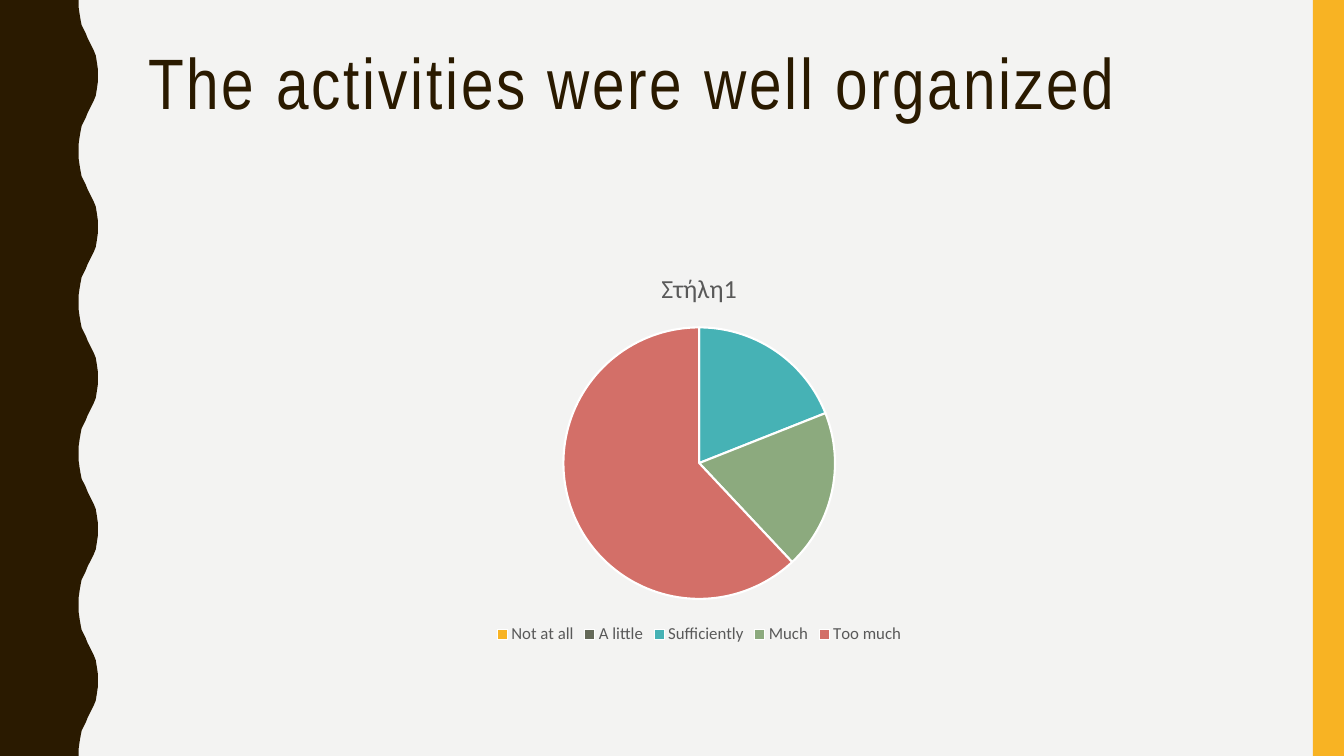
from dataclasses import dataclass

from pptx import Presentation
from pptx import util as u
from pptx.chart.data import CategoryChartData
from pptx.dml.color import RGBColor
from pptx.enum import chart as ch, shapes, text


@dataclass(frozen=True)
class Theme:
    background: str = "F3F3F2"
    dark: str = "2A1A00"
    accent: str = "F8B323"
    muted: str = "595959"
    outline: str = "FFFFFF"
    title_font: str = "Arial Narrow"
    body_font: str = "Calibri"
    title_size: float = 51
    chart_title_size: float = 18.6
    legend_size: float = 12


@dataclass(frozen=True)
class Answer:
    label: str
    percent: int
    color: str


THEME = Theme()
WIDTH, HEIGHT = 13.33, 7.5
LEFT, CONTENT_WIDTH = 1.37, 11.13
SERIES_NAME = "Στήλη1"
ANSWERS = [
    Answer("Not at all", 0, THEME.accent),
    Answer("A little", 0, "656A59"),
    Answer("Sufficiently", 19, "46B2B5"),
    Answer("Much", 19, "8CAA7E"),
    Answer("Too much", 62, "D36F68"),
]
WAVE_COUNT = 5
WAVE_HEIGHT = HEIGHT / WAVE_COUNT
HALF_WAVE = [
    (0.78, 0), (0.78, 0.07), (0.79, 0.14), (0.8, 0.2), (0.81, 0.25),
    (0.83, 0.29), (0.85, 0.33), (0.87, 0.38), (0.89, 0.42), (0.91, 0.46),
    (0.93, 0.5), (0.95, 0.55), (0.96, 0.61), (0.97, 0.68), (0.97, 0.75),
]


def paint(fill, color: str) -> None:
    fill.solid()
    fill.fore_color.rgb = RGBColor.from_string(color)


def style_font(font, name: str, size: float, color: str) -> None:
    font.name = name
    font.size = u.Pt(size)
    font.bold = False
    font.color.rgb = RGBColor.from_string(color)


def finish_shape(sp, color: str) -> None:
    paint(sp.fill, color)
    sp.line.fill.background()
    sp.shadow.inherit = False


def draw_wavy_edge(s) -> None:
    mirrored = [(x, WAVE_HEIGHT - y) for x, y in reversed(HALF_WAVE[:-1])]
    wave = HALF_WAVE + mirrored
    edge = [(x, y + i * WAVE_HEIGHT) for i in range(WAVE_COUNT) for x, y in wave]
    outline = edge + [(0, HEIGHT)]
    builder = s.shapes.build_freeform(0, 0)
    builder.add_line_segments([(u.Inches(x), u.Inches(y)) for x, y in outline])
    finish_shape(builder.convert_to_shape(), THEME.dark)


def draw_right_band(s) -> None:
    band = 0.31
    sp = s.shapes.add_shape(
        shapes.MSO_SHAPE.RECTANGLE,
        u.Inches(WIDTH - band), 0, u.Inches(band), u.Inches(HEIGHT),
    )
    finish_shape(sp, THEME.accent)


def write_title(s, wording: str) -> None:
    sp = s.shapes.title
    sp.left, sp.top = u.Inches(LEFT), u.Inches(0.42)
    sp.width, sp.height = u.Inches(CONTENT_WIDTH), u.Inches(1.63)
    tf = sp.text_frame
    tf.text = wording
    tf.word_wrap = True
    tf.auto_size = text.MSO_AUTO_SIZE.NONE
    tf.vertical_anchor = text.MSO_ANCHOR.TOP
    p = tf.paragraphs[0]
    p.alignment = text.PP_ALIGN.LEFT
    p.line_spacing = 0.9
    style_font(p.font, THEME.title_font, THEME.title_size, THEME.dark)
    p.runs[0].font._element.set("spc", "200")


def draw_pie(s) -> None:
    data = CategoryChartData()
    data.categories = [a.label for a in ANSWERS]
    data.add_series(SERIES_NAME, [a.percent for a in ANSWERS])
    chart = s.shapes.add_chart(
        ch.XL_CHART_TYPE.PIE,
        u.Inches(LEFT), u.Inches(2.5), u.Inches(CONTENT_WIDTH), u.Inches(3.93), data,
    ).chart
    style_font(chart.font, THEME.body_font, 10, "000000")

    chart.has_title = True
    tf = chart.chart_title.text_frame
    tf.text = SERIES_NAME
    style_font(tf.paragraphs[0].font, THEME.body_font, THEME.chart_title_size, THEME.muted)
    chart.chart_title.include_in_layout = False

    chart.has_legend = True
    chart.legend.position = ch.XL_LEGEND_POSITION.BOTTOM
    chart.legend.include_in_layout = False
    style_font(chart.legend.font, THEME.body_font, THEME.legend_size, THEME.muted)

    plot = chart.plots[0]
    plot.vary_by_categories = True
    for i, answer in enumerate(ANSWERS):
        wedge = plot.series[0].points[i].format
        paint(wedge.fill, answer.color)
        paint(wedge.line.fill, THEME.outline)
        wedge.line.width = u.Pt(1.5)


def main() -> None:
    prs = Presentation()
    prs.slide_width, prs.slide_height = u.Inches(WIDTH), u.Inches(HEIGHT)
    s = prs.slides.add_slide(prs.slide_layouts.get_by_name("Title Only"))
    paint(s.background.fill, THEME.background)
    draw_wavy_edge(s)
    draw_right_band(s)
    write_title(s, "The activities were well organized")
    draw_pie(s)
    prs.save("out.pptx")


if __name__ == "__main__":
    main()
